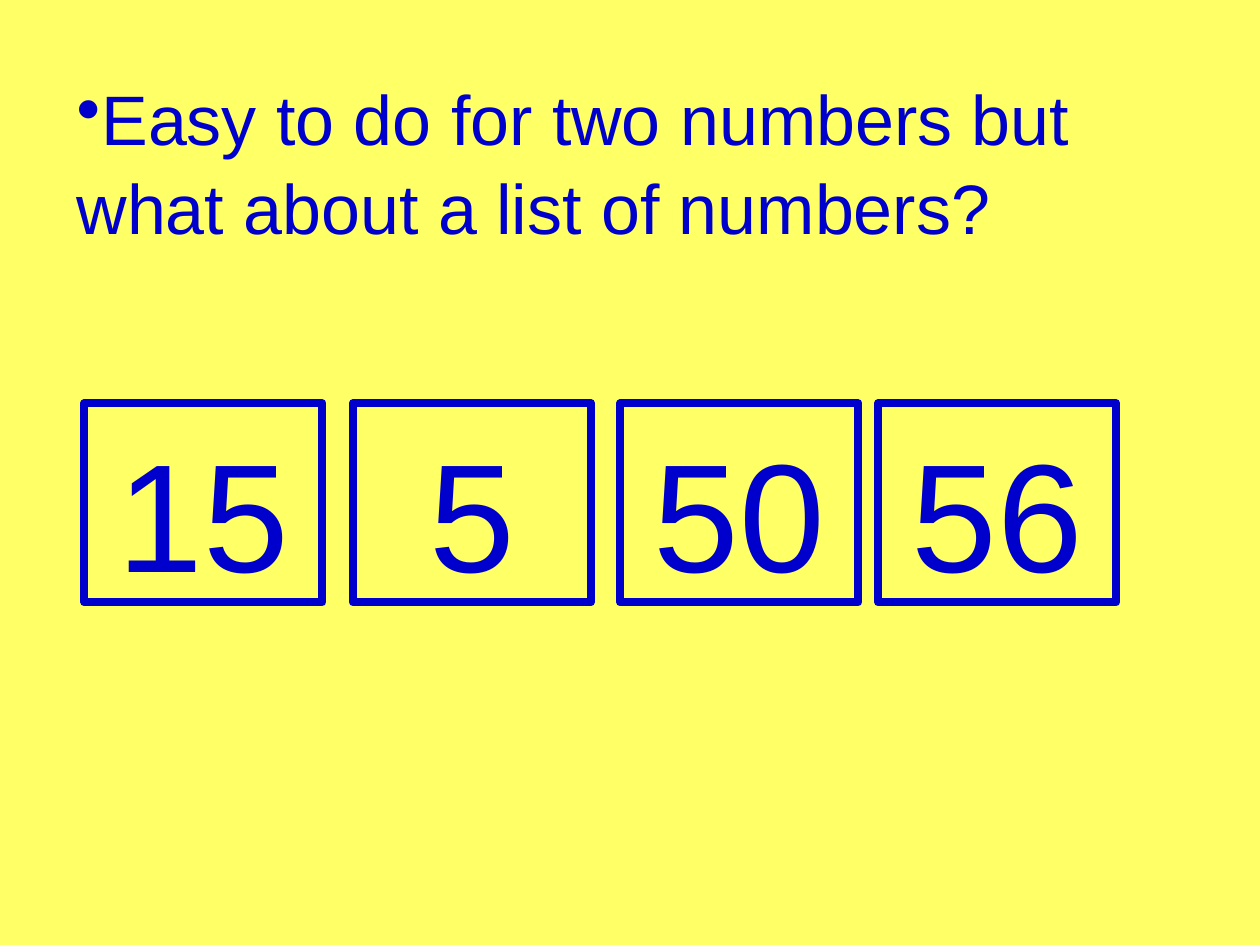
from dataclasses import dataclass

import lxml.etree
import pptx
import pptx.dml.color
import pptx.enum.shapes
import pptx.enum.text
import pptx.oxml.ns
import pptx.util
from pptx.util import Pt


@dataclass(frozen=True)
class Theme:
    background = pptx.dml.color.RGBColor.from_string("FFFF66")
    ink = pptx.dml.color.RGBColor.from_string("0000CC")
    font = "Arial"
    statement_size = Pt(40)
    number_size = Pt(88)
    border = Pt(4.5)
    line_spacing = 1.05


theme = Theme()


def write_text(shape, text, size):
    shape.text_frame.word_wrap = True
    paragraph = shape.text_frame.paragraphs[0]
    paragraph.text = text
    paragraph.line_spacing = theme.line_spacing
    paragraph.font.name = theme.font
    paragraph.font.size = size
    paragraph.font.color.rgb = theme.ink
    return paragraph


presentation = pptx.Presentation()
presentation.slide_width = Pt(720)
presentation.slide_height = Pt(540)
slide = presentation.slides.add_slide(presentation.slide_layouts[6])
slide.background.fill.solid()
slide.background.fill.fore_color.rgb = theme.background

# Bulleted statement
statement = slide.shapes.add_textbox(Pt(36.7), Pt(37.5), Pt(657.4), Pt(104.4))
paragraph = write_text(
    statement,
    "Easy to do for two numbers but what about a list of numbers?",
    theme.statement_size,
)
properties = paragraph._p.get_or_add_pPr()
bullet = lxml.etree.SubElement(properties, pptx.oxml.ns.qn("a:buChar"))
bullet.set("char", "•")

# Row of boxed numbers
number_lefts = {"15": 48.2, "5": 201.6, "50": 354.4, "56": 501.8}
for number, left in number_lefts.items():
    box = slide.shapes.add_shape(
        pptx.enum.shapes.MSO_SHAPE.RECTANGLE, Pt(left), Pt(230.4), Pt(136.1), Pt(113.8)
    )
    box.shadow.inherit = False
    box.fill.background()
    box.line.color.rgb = theme.ink
    box.line.width = theme.border
    lxml.etree.SubElement(box.line._ln, pptx.oxml.ns.qn("a:round"))
    box.text_frame.vertical_anchor = pptx.enum.text.MSO_ANCHOR.TOP
    paragraph = write_text(box, number, theme.number_size)
    paragraph.alignment = pptx.enum.text.PP_ALIGN.CENTER

presentation.save("out.pptx")
